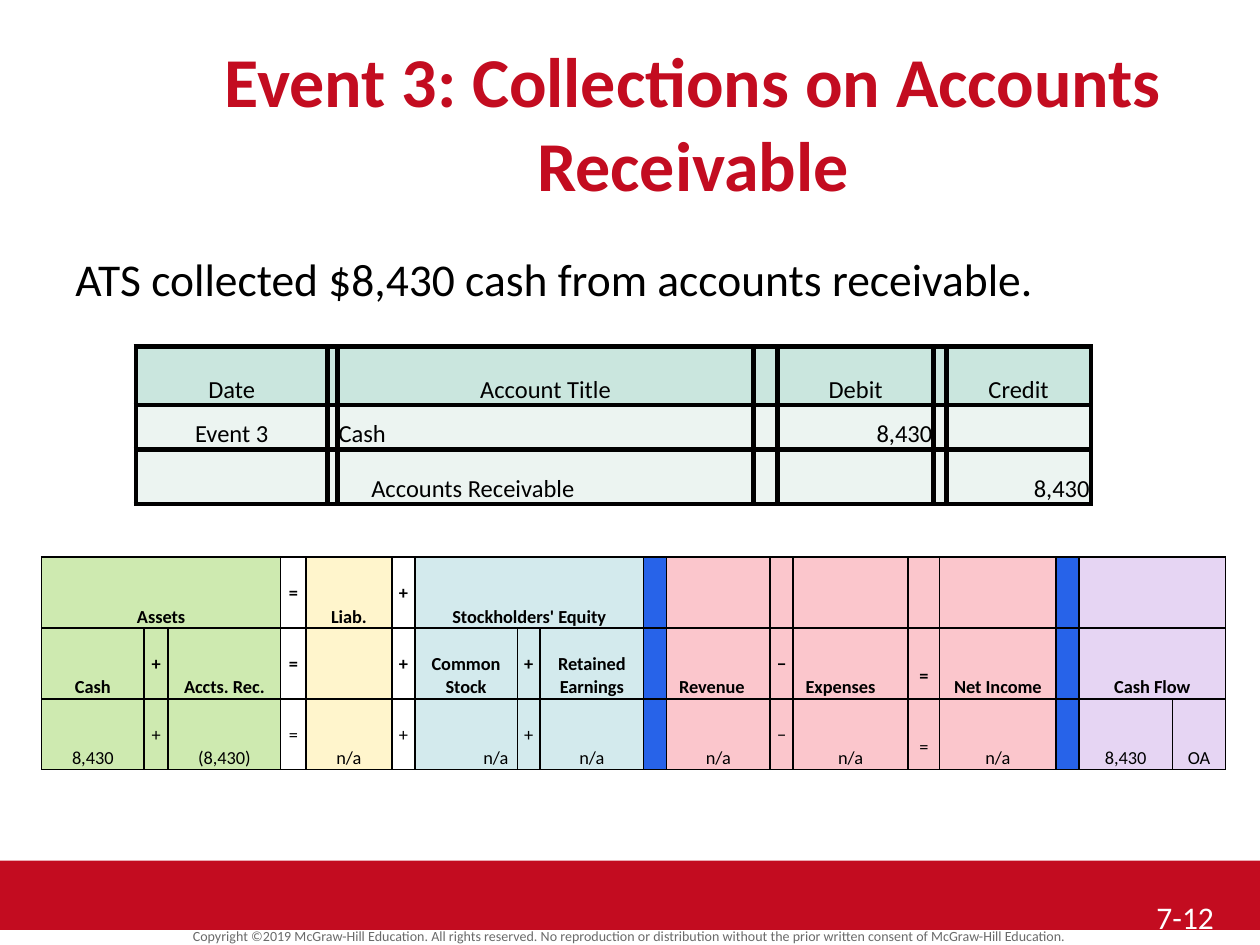
from dataclasses import dataclass

from lxml import etree
from pptx import Presentation
from pptx import util as u
from pptx.dml import color
from pptx.enum import shapes, text
from pptx.oxml import ns

Inches = u.Inches
CENTER, LEFT, RIGHT = text.PP_ALIGN.CENTER, text.PP_ALIGN.LEFT, text.PP_ALIGN.RIGHT
BOTTOM, MIDDLE = text.MSO_ANCHOR.BOTTOM, text.MSO_ANCHOR.MIDDLE


@dataclass(frozen=True)
class Theme:
    font: str = "Calibri"
    red: str = "C30C20"
    black: str = "000000"
    white: str = "FFFFFF"
    gray: str = "6A6A6A"
    journal_head: str = "CAE6DE"
    journal_body: str = "ECF4F1"
    assets: str = "CEEAB0"
    liabilities: str = "FFF5CC"
    equity: str = "D3EAED"
    divider: str = "2763E9"
    income: str = "FBC6CC"
    cash_flow: str = "E6D5F3"
    title_size: float = 40
    body_size: float = 26
    page_size: float = 18
    journal_size: float = 14
    equation_size: float = 10.5
    copyright_size: float = 8


THEME = Theme()


def write(frame, wording, size, ink=THEME.black, bold=False, align=LEFT, spacing=None):
    frame.word_wrap = True
    paragraph = frame.paragraphs[0]
    paragraph.alignment = align
    paragraph.line_spacing = spacing
    run = paragraph.add_run()
    run.text = wording
    run.font.name = THEME.font
    run.font.size = u.Pt(size)
    run.font.bold = bold
    run.font.color.rgb = color.RGBColor.from_string(ink)


def add_text(slide, box, wording, size, top_inset=0.05, **style):
    frame = slide.shapes.add_textbox(*map(Inches, box)).text_frame
    frame.margin_top = Inches(top_inset)
    write(frame, wording, size, **style)


def add_grid(slide, box, widths, heights, border):
    left, top, width, height = map(Inches, box)
    table = slide.shapes.add_table(
        len(heights), len(widths), left, top, width, height
    ).table
    table.first_row = table.horz_banding = False
    for column, share in zip(table.columns, widths):
        column.width = int(width * share / sum(widths))
    for row, share in zip(table.rows, heights):
        row.height = int(height * share / sum(heights))
    for cell in table.iter_cells():
        set_insets(cell, 0, 0)
        set_borders(cell, border)
    return table


def set_insets(cell, left, right, top=0):
    cell.margin_left, cell.margin_right = Inches(left), Inches(right)
    cell.margin_top, cell.margin_bottom = Inches(top), 0


def set_borders(cell, points):
    properties = cell._tc.get_or_add_tcPr()
    for side in ("a:lnL", "a:lnR", "a:lnT", "a:lnB"):
        line = etree.SubElement(properties, ns.qn(side), w=str(u.Pt(points)))
        fill = etree.SubElement(line, ns.qn("a:solidFill"))
        etree.SubElement(fill, ns.qn("a:srgbClr"), val=THEME.black)


def fill_cell(cell, shade):
    if shade is None:
        cell.fill.background()
    else:
        cell.fill.solid()
        cell.fill.fore_color.rgb = color.RGBColor.from_string(shade)


def add_journal(slide, box):
    rows = [
        ["Date", "", "Account Title", "", "Debit", "", "Credit"],
        ["Event 3", "", "Cash", "", "8,430", "", ""],
        ["", "", "Accounts Receivable", "", "", "", "8,430"],
    ]
    alignments = [CENTER, LEFT, LEFT, LEFT, RIGHT, LEFT, RIGHT]
    widths = [1.52, 0.08, 3.31, 0.19, 1.24, 0.1, 1.15]
    table = add_grid(slide, box, widths, [0.46, 0.35, 0.43], border=3)
    for r, row in enumerate(rows):
        for c, wording in enumerate(row):
            cell = table.cell(r, c)
            fill_cell(cell, THEME.journal_body if r else THEME.journal_head)
            if wording:
                cell.vertical_anchor = BOTTOM
                set_insets(cell, 0.01, 0.01)
                align = alignments[c] if r else CENTER
                write(cell.text_frame, wording, THEME.journal_size, align=align)
    table.cell(2, 2).margin_left = Inches(0.27)


def add_equation(slide, box):
    rows = [
        ["Assets", "", "", "=", "Liab.", "+", "Stockholders' Equity"] + [""] * 11,
        ["Cash", "+", "Accts. Rec.", "=", "", "+", "Common Stock", "+",
         "Retained Earnings", "", "Revenue", "−", "Expenses", "=", "Net Income",
         "", "Cash Flow", ""],
        ["8,430", "+", "(8,430)", "=", "n/a", "+", "n/a", "+", "n/a", "", "n/a",
         "−", "n/a", "=", "n/a", "", "8,430", "OA"],
    ]
    widths = [0.81, 0.19, 0.89, 0.2, 0.68, 0.18, 0.81, 0.18, 0.82, 0.18,
              0.82, 0.18, 0.91, 0.25, 0.92, 0.18, 0.74, 0.42]
    shades = ([THEME.assets] * 3 + [None, THEME.liabilities, None]
              + [THEME.equity] * 3 + [THEME.divider] + [THEME.income] * 5
              + [THEME.divider] + [THEME.cash_flow] * 2)
    alignments = {(1, 10): LEFT, (1, 12): LEFT, (2, 6): RIGHT}
    merges = [(0, 0, 2), (0, 6, 8), (0, 16, 17), (1, 16, 17)]
    result_sign = 13

    table = add_grid(slide, box, widths, [1, 1, 1], border=1)
    for row, first, last in merges:
        table.cell(row, first).merge(table.cell(row, last))
    for r, row in enumerate(rows):
        for c, wording in enumerate(row):
            cell = table.cell(r, c)
            fill_cell(cell, shades[c])
            if not wording:
                continue
            align = alignments.get((r, c), CENTER)
            if wording in "+−=":
                cell.vertical_anchor = MIDDLE
                set_insets(cell, 0, 0, top=0.2 if c == result_sign else 0)
            else:
                cell.vertical_anchor = BOTTOM
                set_insets(cell, 0.1 if align == LEFT else 0.07, 0.07)
            write(cell.text_frame, wording, THEME.equation_size,
                  bold=r < 2, align=align, spacing=1.07)


def add_footer(slide, box):
    left, top, width, height = box
    band = slide.shapes.add_shape(
        shapes.MSO_SHAPE.RECTANGLE, *map(Inches, (left, top, width, 0.55))
    )
    band.shadow.inherit = False
    band.fill.solid()
    band.fill.fore_color.rgb = color.RGBColor.from_string(THEME.red)
    band.line.fill.background()
    add_text(
        slide, (left, top + 0.51, width, 0.19),
        "Copyright ©2019 McGraw-Hill Education. All rights reserved. No reproduction "
        "or distribution without the prior written consent of McGraw-Hill Education.",
        THEME.copyright_size, ink=THEME.gray, align=CENTER, spacing=0.8,
    )
    add_text(slide, (left + width - 0.92, top + height - 0.42, 0.92, 0.42),
             "7-12", THEME.page_size, ink=THEME.white)


def main():
    presentation = Presentation()
    presentation.slide_width, presentation.slide_height = Inches(10), Inches(7.5)
    slide = presentation.slides.add_slide(presentation.slide_layouts[6])
    add_footer(slide, (0, 6.83, 10, 0.67))
    add_text(slide, (1, 0.25, 9, 0.67), "Event 3: Collections on Accounts Receivable",
             THEME.title_size, ink=THEME.red, bold=True, align=CENTER)
    add_text(slide, (0.5, 1.33, 9, 5.17),
             "ATS collected $8,430 cash from accounts receivable.",
             THEME.body_size, top_inset=0.66)
    add_equation(slide, (0.33, 4.42, 9.4, 1.69))
    add_journal(slide, (1.08, 2.75, 7.58, 1.25))
    presentation.save("out.pptx")


if __name__ == "__main__":
    main()
